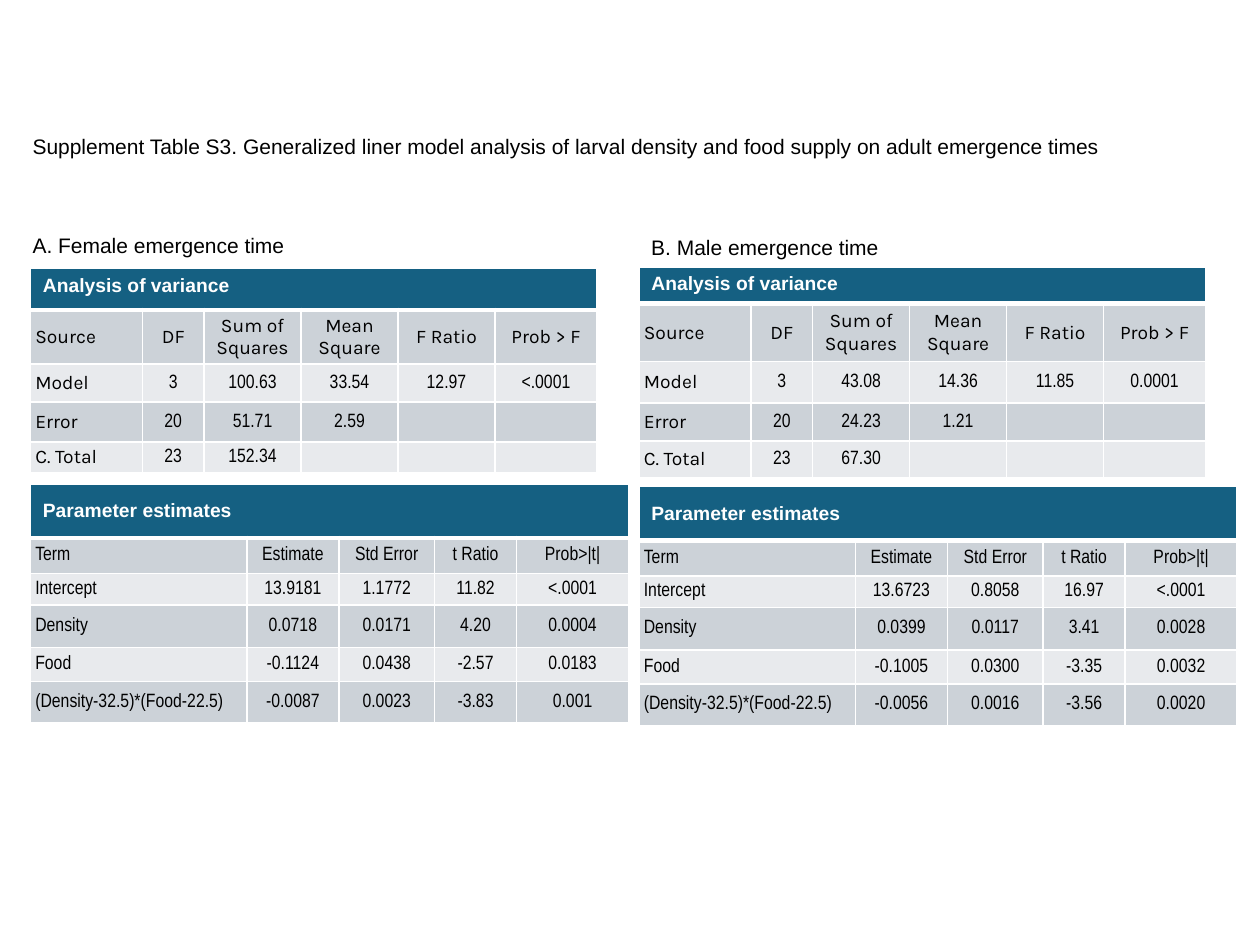
from lxml import etree
from pptx import Presentation
from pptx import util as u
from pptx.dml import color
from pptx.enum import text
from pptx.oxml import ns

TITLE = ("Supplement Table S3. Generalized liner model analysis of larval density "
         "and food supply on adult emergence times")
TITLE_BOX = (0.16, 1.01, 9.35, 0.3)

BLACK, WHITE, BLUE = "000000", "FFFFFF", "156082"
BANDS = ["CCD2D8", "E8EAED"]

VARIANCE = "Analysis of variance"
VARIANCE_COLS = [0.89, 0.49, 0.77, 0.77, 0.77, 0.81]
VARIANCE_HEAD = ["Source", "DF", "Sum of Squares", "Mean Square", "F Ratio", "Prob > F"]

ESTIMATES = "Parameter estimates"
ESTIMATE_COLS = [1.72, 0.73, 0.76, 0.65, 0.89]
ESTIMATE_ROWS = [0.43, 0.28, 0.25, 0.34, 0.27, 0.33]
ESTIMATE_HEAD = ["Term", "Estimate", "Std Error", "t Ratio", "Prob>|t|"]

PANELS = [
    {
        "label": "A. Female emergence time", "label_box": (0.16, 1.8, 2.22, 0.3),
        "left": 0.24, "variance_top": 2.13, "estimate_top": 3.84,
        "variance_rows": [0.33, 0.43, 0.3, 0.32, 0.24],
        "variance": [
            ["Model", "3", "100.63", "33.54", "12.97", "<.0001"],
            ["Error", "20", "51.71", "2.59", "", ""],
            ["C. Total", "23", "152.34", "", "", ""],
        ],
        "estimates": [
            ["Intercept", "13.9181", "1.1772", "11.82", "<.0001"],
            ["Density", "0.0718", "0.0171", "4.20", "0.0004"],
            ["Food", "-0.1124", "0.0438", "-2.57", "0.0183"],
            ["(Density-32.5)*(Food-22.5)", "-0.0087", "0.0023", "-3.83", "0.001"],
        ],
    },
    {
        "label": "B. Male emergence time", "label_box": (5.07, 1.81, 2.02, 0.3),
        "left": 5.07, "variance_top": 2.12, "estimate_top": 3.86,
        "variance_rows": [0.29, 0.46, 0.33, 0.3, 0.29],
        "variance": [
            ["Model", "3", "43.08", "14.36", "11.85", "0.0001"],
            ["Error", "20", "24.23", "1.21", "", ""],
            ["C. Total", "23", "67.30", "", "", ""],
        ],
        "estimates": [
            ["Intercept", "13.6723", "0.8058", "16.97", "<.0001"],
            ["Density", "0.0399", "0.0117", "3.41", "0.0028"],
            ["Food", "-0.1005", "0.0300", "-3.35", "0.0032"],
            ["(Density-32.5)*(Food-22.5)", "-0.0056", "0.0016", "-3.56", "0.0020"],
        ],
    },
]


def rgb(value):
    return color.RGBColor.from_string(value)


def set_attrs(obj, values):
    for name, value in values.items():
        setattr(obj, name, value)


def write(p, words, font, size, ink=BLACK, bold=False):
    r = p.add_run()
    r.text = words
    set_attrs(r.font, {"name": font, "size": u.Pt(size), "bold": bold})
    r.font.color.rgb = rgb(ink)


def add_label(s, words, box, wrap):
    sp = s.shapes.add_textbox(*map(u.Inches, box))
    tf = sp.text_frame
    set_attrs(tf, {"word_wrap": wrap, "auto_size": text.MSO_AUTO_SIZE.SHAPE_TO_FIT_TEXT})
    write(tf.paragraphs[0], words, "Arial", 12)


def paint(cell, fill, top=1, bottom=1):
    tc_pr = cell._tc.get_or_add_tcPr()
    for side, width in {"L": 1, "R": 1, "T": top, "B": bottom}.items():
        ln = etree.SubElement(tc_pr, ns.qn("a:ln" + side), w=str(u.Pt(width)))
        solid = etree.SubElement(ln, ns.qn("a:solidFill"))
        etree.SubElement(solid, ns.qn("a:srgbClr"), val=WHITE)
    cell.fill.solid()
    cell.fill.fore_color.rgb = rgb(fill)


def fill_body_cell(cell, words, first, font):
    set_attrs(cell, {
        "margin_left": u.Inches(0.04 if first else 0), "margin_right": 0,
        "margin_top": 0, "margin_bottom": 0,
        "vertical_anchor": text.MSO_ANCHOR.MIDDLE,
    })
    p = cell.text_frame.paragraphs[0]
    if not first:
        p.alignment = text.PP_ALIGN.CENTER
    if words:
        write(p, words, font, 11)
    else:
        p._p.get_or_add_endParaRPr().set("sz", "1100")


def add_table(s, left, top, cols, heights, heading, rows, font_for, anchor):
    size = map(u.Inches, (left, top, sum(cols), sum(heights)))
    table = s.shapes.add_table(len(heights), len(cols), *size).table
    for col, width in zip(table.columns, cols):
        col.width = u.Inches(width)
    for row, height in zip(table.rows, heights):
        row.height = u.Inches(height)
    for cell in table.rows[0].cells:
        paint(cell, BLUE, bottom=3)
    title = table.cell(0, 0)
    title.merge(table.cell(0, len(cols) - 1))
    title.vertical_anchor = anchor
    write(title.text_frame.paragraphs[0], heading, "Arial", 11, WHITE, True)
    for i, row in enumerate(rows):
        for j, words in enumerate(row):
            cell = table.cell(i + 1, j)
            paint(cell, BANDS[i % 2], top=1 if i else 3)
            fill_body_cell(cell, words, j == 0, font_for(i, j))


def variance_font(i, j):
    return "Arial Narrow" if i and j else "Karla"


def estimate_font(i, j):
    return "Arial Narrow"


def main():
    prs = Presentation()
    set_attrs(prs, {"slide_width": u.Inches(10), "slide_height": u.Inches(7.5)})
    s = prs.slides.add_slide(prs.slide_layouts[6])
    add_label(s, TITLE, TITLE_BOX, True)
    for panel in PANELS:
        add_label(s, panel["label"], panel["label_box"], False)
        add_table(s, panel["left"], panel["variance_top"], VARIANCE_COLS,
                  panel["variance_rows"], VARIANCE,
                  [VARIANCE_HEAD] + panel["variance"], variance_font, text.MSO_ANCHOR.TOP)
        add_table(s, panel["left"], panel["estimate_top"], ESTIMATE_COLS,
                  ESTIMATE_ROWS, ESTIMATES,
                  [ESTIMATE_HEAD] + panel["estimates"], estimate_font, text.MSO_ANCHOR.MIDDLE)
    prs.save("out.pptx")


if __name__ == "__main__":
    main()
